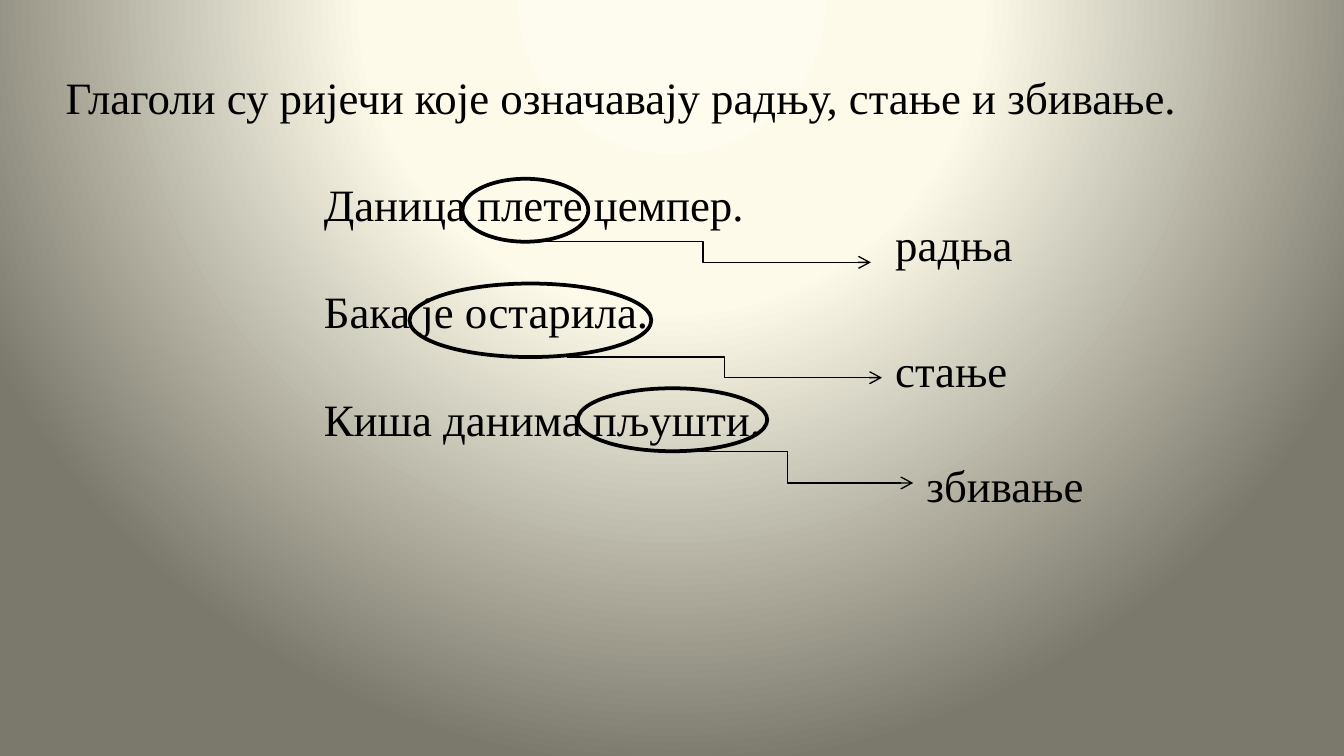
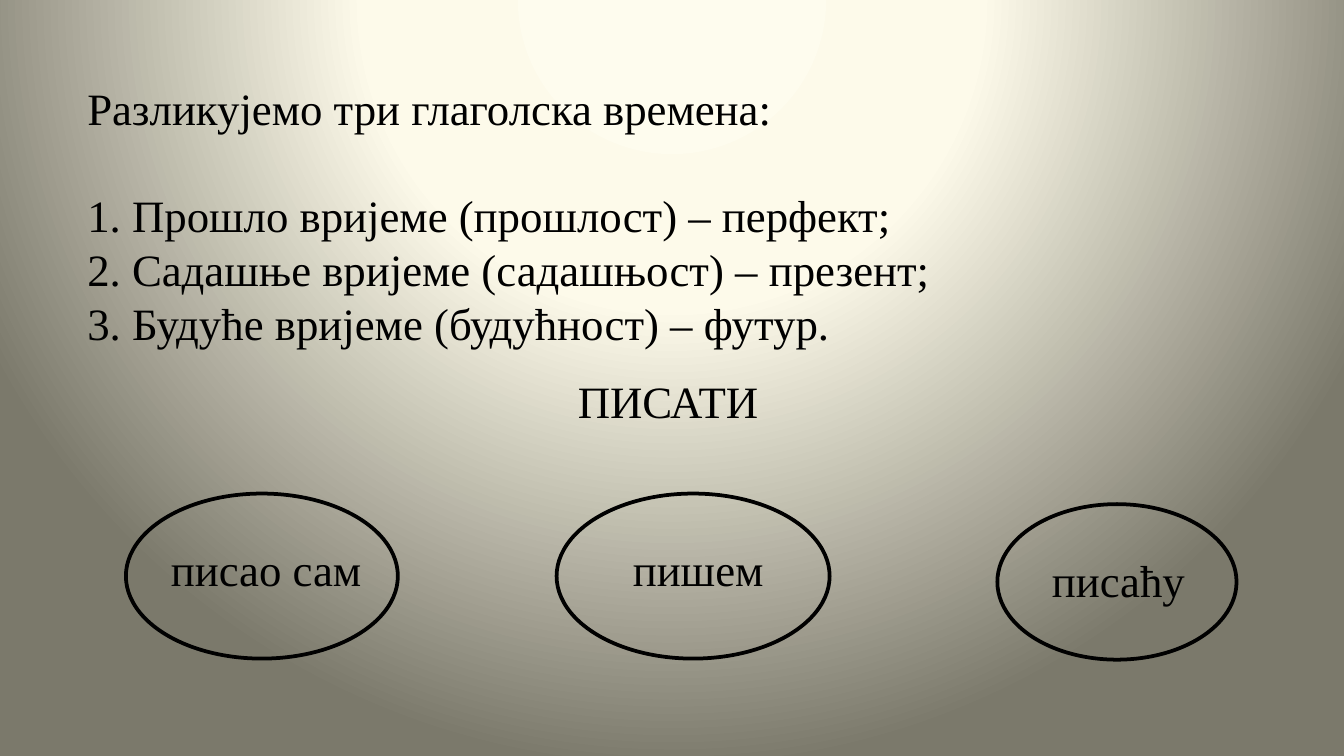
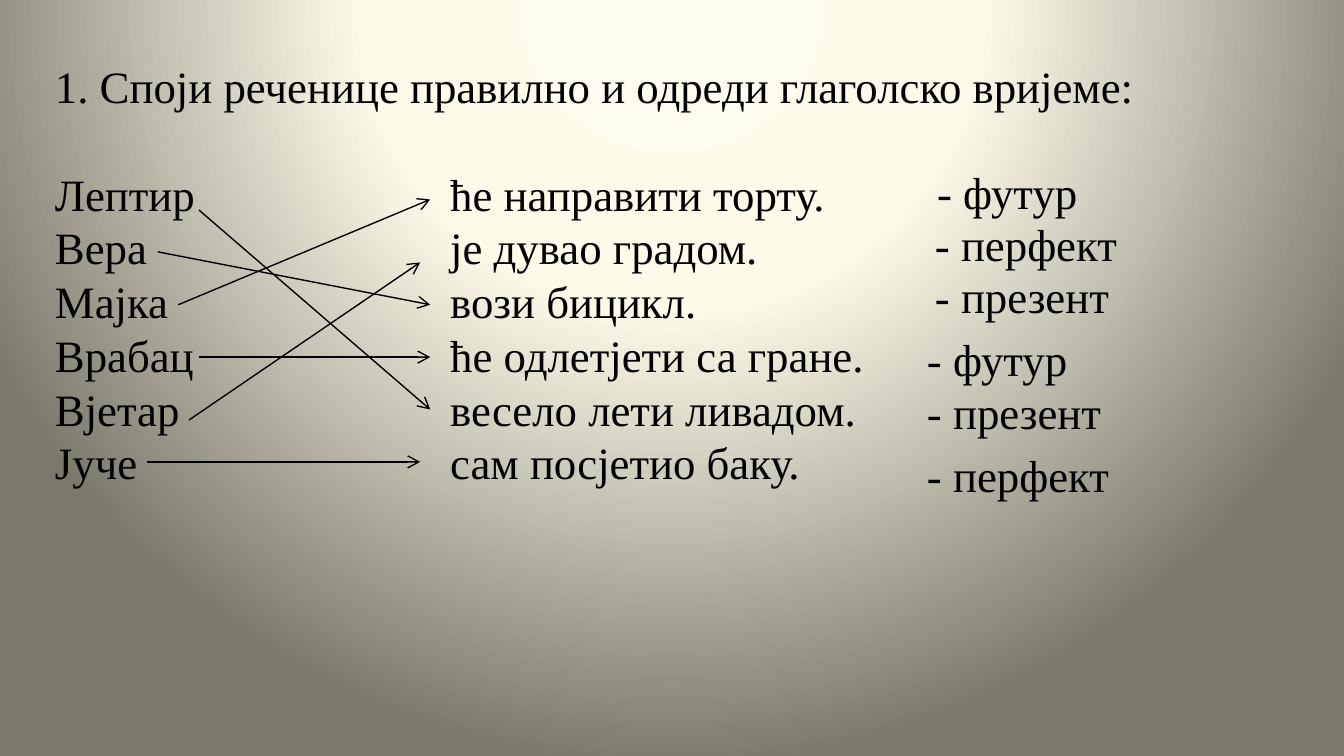
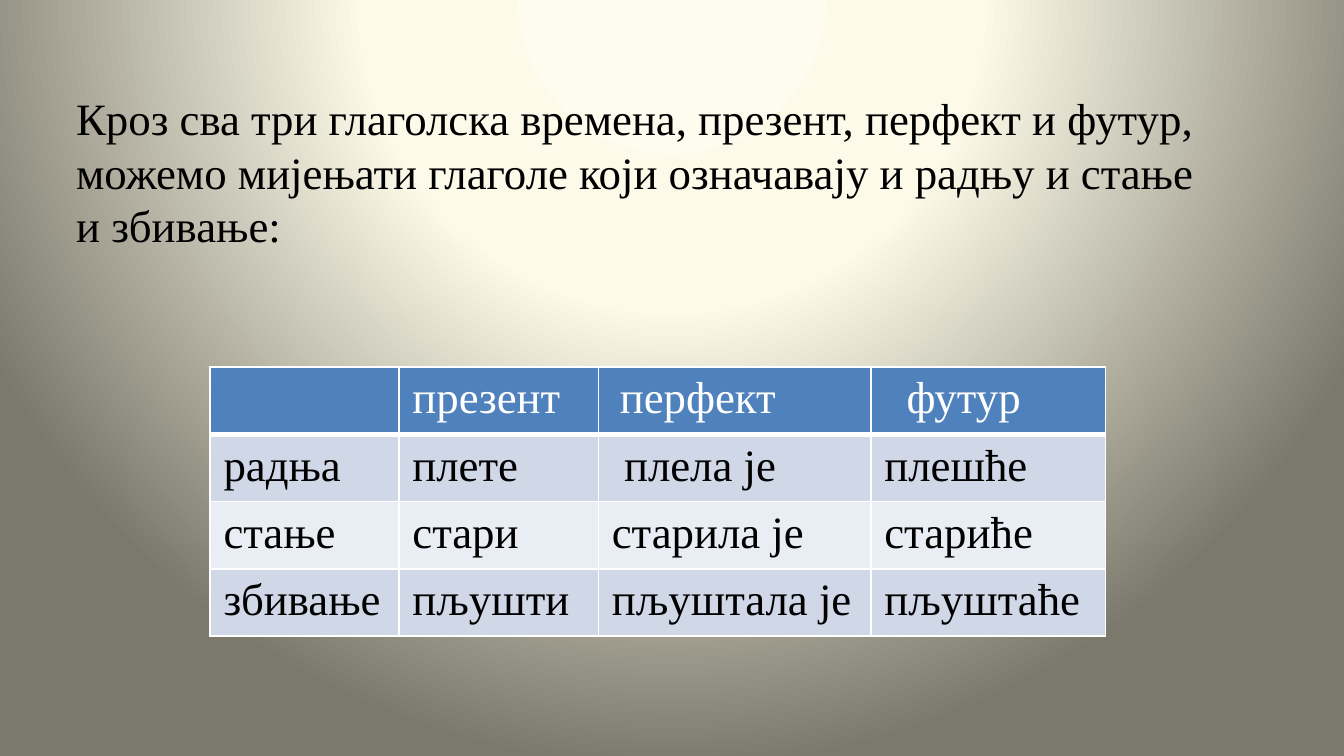
from dataclasses import dataclass

from pptx import Presentation
from pptx.dml.color import RGBColor
from pptx.enum.shapes import MSO_CONNECTOR, MSO_SHAPE
from pptx.enum.text import MSO_AUTO_SIZE
from pptx.oxml import parse_xml
from pptx.oxml.ns import nsdecls, qn
from pptx.util import Cm, Pt


@dataclass(frozen=True)
class Theme:
    font: str = "Times New Roman"
    size: float = 24
    line: float = 28.7          # height of one text line, pt
    ink: str = "000000"
    white: str = "FFFFFF"
    header: str = "4F81BD"
    bands: tuple = ("D0D8E8", "E9EDF4")
    glow: tuple = ((0, "FEFCEE"), (40, "FDFAEA"), (100, "7B796B"))
    oval_width: float = 2
    arrow_width: float = 0.75


T = Theme()

# --- Content (lengths in cm) ---
DEFINITION = "Глаголи су ријечи које означавају радњу, стање и збивање."
# sentence, oval (x, y, w, h), arrow (x1, y1, x2, y2), label, label (x, y, w)
EXAMPLES = [
    ("Даница плете џемпер.", (8.74, 3.38, 2.38, 1.19),
     (10.11, 4.56, 16.46, 4.96), "радња", (16.67, 3.97, 6.75)),
    ("Бака је остарила.", (7.74, 5.36, 4.57, 1.39),
     (10.72, 6.75, 16.67, 7.14), "стање", (16.67, 6.35, 5.95)),
    ("Киша данима пљушти.", (10.92, 7.34, 3.58, 1.19),
     (12.5, 8.53, 17.26, 9.13), "збивање", (17.26, 8.53, 5.36)),
]

TENSES_TITLE = "Разликујемо три глаголска времена:"
TENSES = [
    "1. Прошло вријеме (прошлост) – перфект;",
    "2. Садашње вријеме (садашњост) – презент;",
    "3. Будуће вријеме (будућност) – футур.",
]
INFINITIVE = ("ПИСАТИ", (10.67, 6.94, 8.5))
# form, oval (x, y, w, h), label (x, y, w)
FORMS = [
    ("писао сам", (2.38, 9.33, 5.14, 3.12), (2.98, 10.12, 4.57)),
    ("пишем", (10.52, 9.33, 5.16, 3.12), (11.71, 10.12, 4.17)),
    ("писаћу", (18.85, 9.53, 4.52, 2.94), (19.63, 10.32, 3.97)),
]

MATCH_TITLE = "1. Споји реченице правилно и одреди глаголско вријеме:"
# subject, predicate, tense, tense label (x, y)
MATCHES = [
    ("Лептир", "ће направити торту.", "футур", (17.46, 2.98)),
    ("Вера", "је дувао градом.", "перфект", (17.42, 3.97)),
    ("Мајка", "вози бицикл.", "презент", (17.42, 4.96)),
    ("Врабац", "ће одлетјети са гране.", "футур", (17.27, 6.15)),
    ("Вјетар", "весело лети ливадом.", "презент", (17.27, 7.14)),
    ("Јуче", "сам посјетио баку.", "перфект", (17.27, 8.33)),
]
MATCH_ARROWS = [
    (3.76, 3.97, 8.13, 7.74), (2.98, 4.76, 8.13, 5.76),
    (3.37, 5.76, 8.13, 3.77), (3.76, 6.75, 8.13, 6.75),
    (3.57, 7.94, 7.94, 4.96), (2.78, 8.73, 7.94, 8.73),
]

SUMMARY = [
    "Кроз сва три глаголска времена, презент, перфект и футур,",
    "можемо мијењати глаголе који означавају и радњу и стање и збивање:",
]
TABLE = [
    ("", "презент", "перфект", "футур"),
    ("радња", "плете", "плела је", "плешће"),
    ("стање", "стари", "старила је", "стариће"),
    ("збивање", "пљушти", "пљуштала је", "пљуштаће"),
]
COLUMNS = (3.57, 3.77, 5.15, 4.43)
ROW_HEIGHT = 1.27
CELL_INDENTS = {(0, 2): 0.15, (0, 3): 0.42, (1, 2): 0.23}


# --- Helpers ---
def rgb(value):
    return RGBColor.from_string(value)


def add_run(p, text, color=T.ink):
    r = p.add_run()
    r.text = text
    r.font.name, r.font.size = T.font, Pt(T.size)
    r.font.bold = False
    r.font.color.rgb = rgb(color)


def indent(p, cm):
    pPr = p._p.get_or_add_pPr()
    pPr.set("marL", str(Cm(cm)))
    pPr.set("indent", "0")


def add_text(s, x, y, w, lines, gaps=(), indents=(), tab=None):
    """Lines of text; gaps and indents name line numbers or offsets."""
    sp = s.shapes.add_textbox(Cm(x), Cm(y), Cm(w), Cm(0.25 + len(lines)))
    tf = sp.text_frame
    tf.word_wrap = True
    tf.auto_size = MSO_AUTO_SIZE.SHAPE_TO_FIT_TEXT
    for i, line in enumerate(lines):
        p = tf.paragraphs[0] if i == 0 else tf.add_paragraph()
        if tab and "\t" in line:
            p._p.get_or_add_pPr().append(parse_xml(
                f'<a:tabLst {nsdecls("a")}><a:tab pos="{Cm(tab)}" algn="l"/></a:tabLst>'))
        if i in gaps:
            p.space_before = Pt(T.line)
        if i < len(indents) and indents[i]:
            indent(p, indents[i])
        add_run(p, line)


def add_oval(s, box):
    sp = s.shapes.add_shape(MSO_SHAPE.OVAL, *map(Cm, box))
    sp.shadow.inherit = False
    sp.fill.background()
    sp.line.color.rgb = rgb(T.ink)
    sp.line.width = Pt(T.oval_width)


def add_arrow(s, ends, kind=MSO_CONNECTOR.STRAIGHT):
    sp = s.shapes.add_connector(kind, *map(Cm, ends))
    sp.line.color.rgb = rgb(T.ink)
    sp.line.width = Pt(T.arrow_width)
    sp.line._get_or_add_ln().append(
        parse_xml(f'<a:tailEnd {nsdecls("a")} type="arrow"/>'))
    sp._element.spPr.append(parse_xml(f'<a:effectLst {nsdecls("a")}/>'))


def set_borders(cell, bottom):
    tcPr = cell._tc.get_or_add_tcPr()
    for i, (side, width) in enumerate(
            (("L", 1), ("R", 1), ("T", 1), ("B", bottom))):
        tcPr.insert(i, parse_xml(
            f'<a:ln{side} {nsdecls("a")} w="{Pt(width)}"><a:solidFill>'
            f'<a:srgbClr val="{T.white}"/></a:solidFill></a:ln{side}>'))


def set_background(master):
    master.background.fill.gradient()
    old = next(master.element.iter(qn("a:gradFill")))
    stops = "".join(f'<a:gs pos="{pos * 1000}"><a:srgbClr val="{color}"/></a:gs>'
                    for pos, color in T.glow)
    old.getparent().replace(old, parse_xml(
        f'<a:gradFill {nsdecls("a")} rotWithShape="1"><a:gsLst>{stops}</a:gsLst>'
        '<a:path path="circle"><a:fillToRect l="50000" t="-80000" r="50000" '
        'b="180000"/></a:path></a:gradFill>'))


# --- Slides ---
def build_definition(s):
    sentences = [row[0] for row in EXAMPLES]
    add_text(s, 0.99, 1.19, 23.42, [DEFINITION] + sentences,
             gaps=(1, 2, 3), indents=(0, 4.88, 4.88, 4.88))
    for _, oval, arrow, label, (x, y, w) in EXAMPLES:
        add_oval(s, oval)
        add_arrow(s, arrow, MSO_CONNECTOR.ELBOW)
        add_text(s, x, y, w, [label])


def build_tenses(s):
    add_text(s, 1.4, 1.4, 22.23, [TENSES_TITLE] + TENSES, gaps=(1,))
    word, place = INFINITIVE
    add_text(s, *place, [word])
    for form, oval, place in FORMS:
        add_oval(s, oval)
        add_text(s, *place, [form])


def build_matching(s):
    rows = [f"{subject}\t{predicate}" for subject, predicate, _, _ in MATCHES]
    add_text(s, 0.79, 0.99, 23.42, [MATCH_TITLE] + rows, gaps=(1,), tab=7.47)
    for ends in MATCH_ARROWS:
        add_arrow(s, ends)
    for _, _, tense, (x, y) in MATCHES:
        add_text(s, x, y, 5, [f"- {tense}"])


def build_summary(s):
    add_text(s, 1.19, 1.59, 21.82, SUMMARY)
    table = s.shapes.add_table(
        len(TABLE), len(COLUMNS), Cm(3.97), Cm(6.94),
        Cm(sum(COLUMNS)), Cm(ROW_HEIGHT * len(TABLE))).table
    for column, width in zip(table.columns, COLUMNS):
        column.width = Cm(width)
    for i, row in enumerate(TABLE):
        fill = T.bands[(i - 1) % 2] if i else T.header
        for j, text in enumerate(row):
            cell = table.cell(i, j)
            cell.fill.solid()
            cell.fill.fore_color.rgb = rgb(fill)
            set_borders(cell, 1 if i else 3)
            p = cell.text_frame.paragraphs[0]
            if (i, j) in CELL_INDENTS:
                indent(p, CELL_INDENTS[i, j])
            if text:
                add_run(p, text, T.ink if i else T.white)


def main():
    prs = Presentation()
    prs.slide_width, prs.slide_height = Cm(25.4), Cm(14.29)
    set_background(prs.slide_master)
    for build in (build_definition, build_tenses, build_matching, build_summary):
        build(prs.slides.add_slide(prs.slide_layouts[6]))
    prs.save("out.pptx")


if __name__ == "__main__":
    main()
